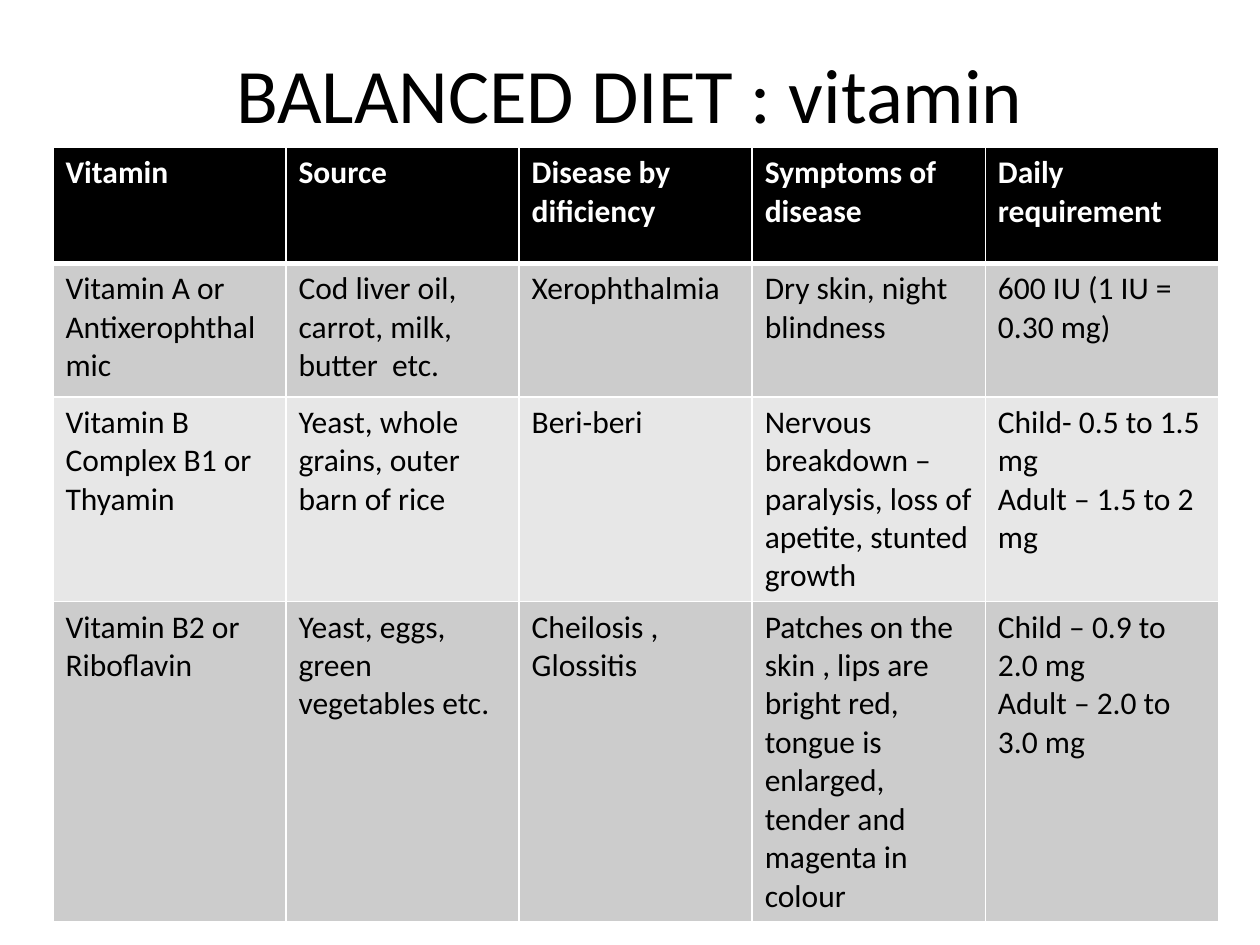
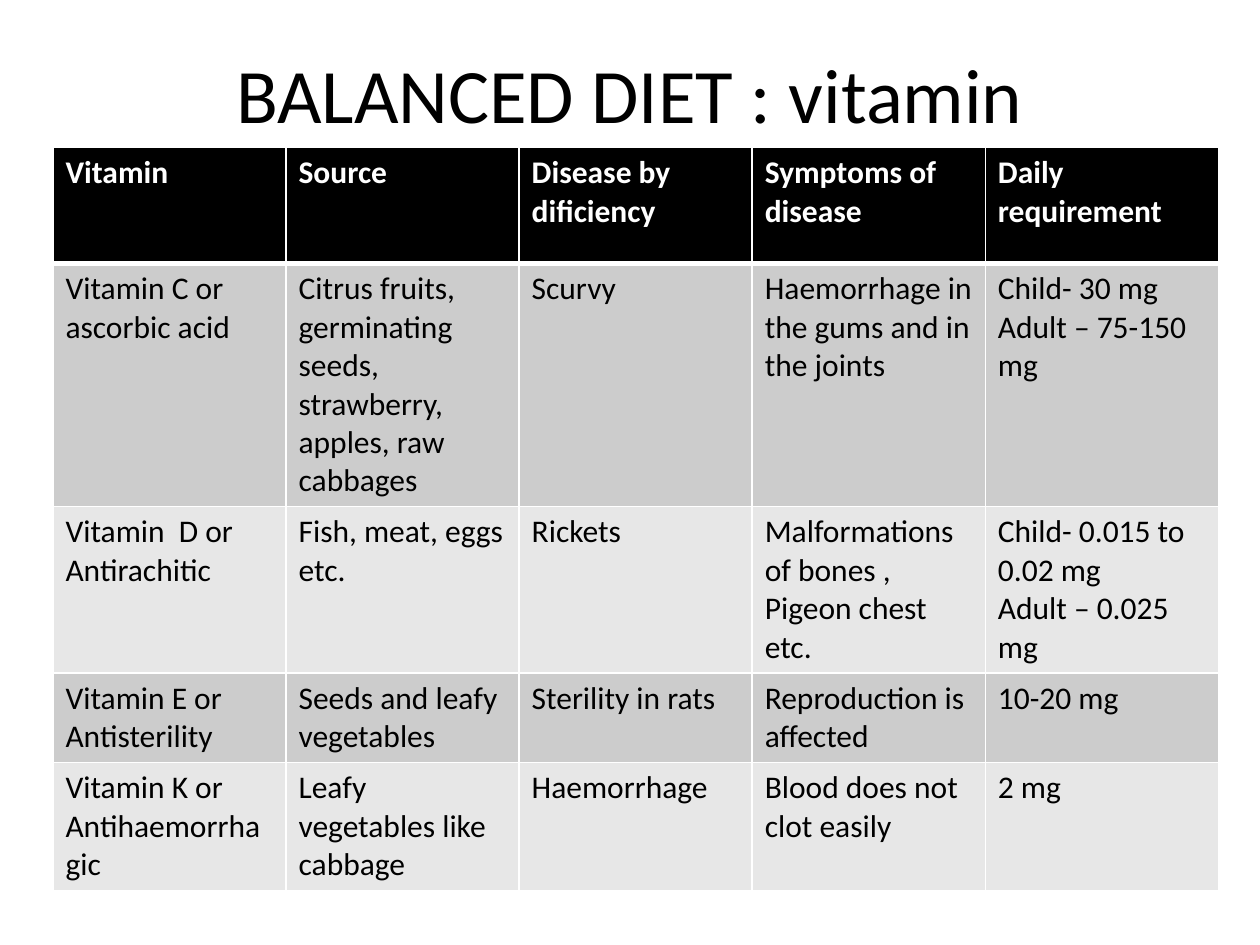
from lxml.etree import SubElement
from pptx import Presentation
from pptx.dml.color import RGBColor
from pptx.enum.text import MSO_ANCHOR, PP_ALIGN
from pptx.oxml.ns import qn
from pptx.util import Inches, Pt

COLORS = {"ink": "000000", "paper": "FFFFFF", "odd": "CCCCCC", "even": "E7E7E7"}
FONT = "Calibri"
TITLE = "BALANCED DIET : vitamin"
HEADER = ["Vitamin", "Source", "Disease by dificiency", "Symptoms of disease", "Daily requirement"]
ROW_PERCENTS = [12.27, 14.13, 14.13, 7.07, 7.07]

VITAMIN_TABLES = [
    (81.07, [
        ["Vitamin A or Antixerophthalmic", "Cod liver oil, carrot, milk, butter  etc.",
         "Xerophthalmia", "Dry skin, night blindness", "600 IU (1 IU = 0.30 mg)"],
        ["Vitamin B Complex B1 or Thyamin", "Yeast, whole grains, outer barn of rice", "Beri-beri",
         "Nervous breakdown –paralysis, loss of apetite, stunted growth",
         "Child- 0.5 to 1.5 mg\nAdult – 1.5 to 2 mg"],
        ["Vitamin B2 or Riboflavin", "Yeast, eggs, green vegetables etc.", "Cheilosis , Glossitis",
         "Patches on the skin , lips are bright red, tongue is enlarged, tender and magenta in colour",
         "Child – 0.9 to 2.0 mg\nAdult – 2.0 to 3.0 mg"],
    ]),
    (77.6, [
        ["Vitamin C or  ascorbic acid",
         "Citrus fruits, germinating seeds, strawberry, apples, raw cabbages", "Scurvy",
         "Haemorrhage in the gums and in the joints", "Child- 30 mg\nAdult – 75-150 mg"],
        ["Vitamin  D or Antirachitic", "Fish, meat, eggs etc.", "Rickets",
         "Malformations of bones , Pigeon chest etc.",
         "Child- 0.015 to 0.02 mg\nAdult – 0.025 mg"],
        ["Vitamin E or Antisterility", "Seeds and leafy vegetables", "Sterility in rats",
         "Reproduction is affected", "10-20 mg"],
        ["Vitamin K or Antihaemorrhagic", "Leafy vegetables like cabbage", "Haemorrhage",
         "Blood does not clot easily", "2 mg"],
    ]),
]


def format_text(text_frame, size, color, bold=False):
    for paragraph in text_frame.paragraphs:
        for run in paragraph.runs:
            run.font.name = FONT
            run.font.size = Pt(size)
            run.font.bold = bold
            run.font.color.rgb = RGBColor.from_string(COLORS[color])


def add_border(cell, side, width):
    line = SubElement(cell._tc.get_or_add_tcPr(), qn(f"a:ln{side}"), w=str(Pt(width)))
    fill = SubElement(line, qn("a:solidFill"))
    SubElement(fill, qn("a:srgbClr"), val=COLORS["paper"])


presentation = Presentation()
presentation.slide_width = Inches(10)
presentation.slide_height = Inches(7.5)
across = presentation.slide_width / 100
down = presentation.slide_height / 100

for table_percent, vitamins in VITAMIN_TABLES:
    slide = presentation.slides.add_slide(presentation.slide_layouts[5])
    slide.background.fill.solid()
    slide.background.fill.fore_color.rgb = RGBColor.from_string(COLORS["paper"])

    title = slide.shapes.title
    title.left, title.top = int(5 * across), int(4 * down)
    title.width, title.height = int(90 * across), int(11.6 * down)
    title.text_frame.text = TITLE
    title.text_frame.vertical_anchor = MSO_ANCHOR.MIDDLE
    title.text_frame.paragraphs[0].alignment = PP_ALIGN.CENTER
    format_text(title.text_frame, 44, "ink")

    rows = [HEADER] + vitamins
    table_height = int(table_percent * down)
    table_shape = slide.shapes.add_table(
        len(rows), len(HEADER), int(4.2 * across), int(15.6 * down), int(92.5 * across), table_height)
    table = table_shape.table

    for row_index, texts in enumerate(rows):
        table.rows[row_index].height = int(ROW_PERCENTS[row_index] * down)
        is_header = row_index == 0
        fill_color = "ink" if is_header else "odd" if row_index % 2 else "even"
        border_widths = {"L": 1, "R": 1, "T": 3 if row_index == 1 else 1, "B": 3 if is_header else 1}
        for column_index, text in enumerate(texts):
            cell = table.cell(row_index, column_index)
            for side, width in border_widths.items():
                add_border(cell, side, width)
            cell.fill.solid()
            cell.fill.fore_color.rgb = RGBColor.from_string(COLORS[fill_color])
            cell.text_frame.text = text
            format_text(cell.text_frame, 18, "paper" if is_header else "ink", bold=is_header)

    table_shape.height = table_height

presentation.save("out.pptx")
